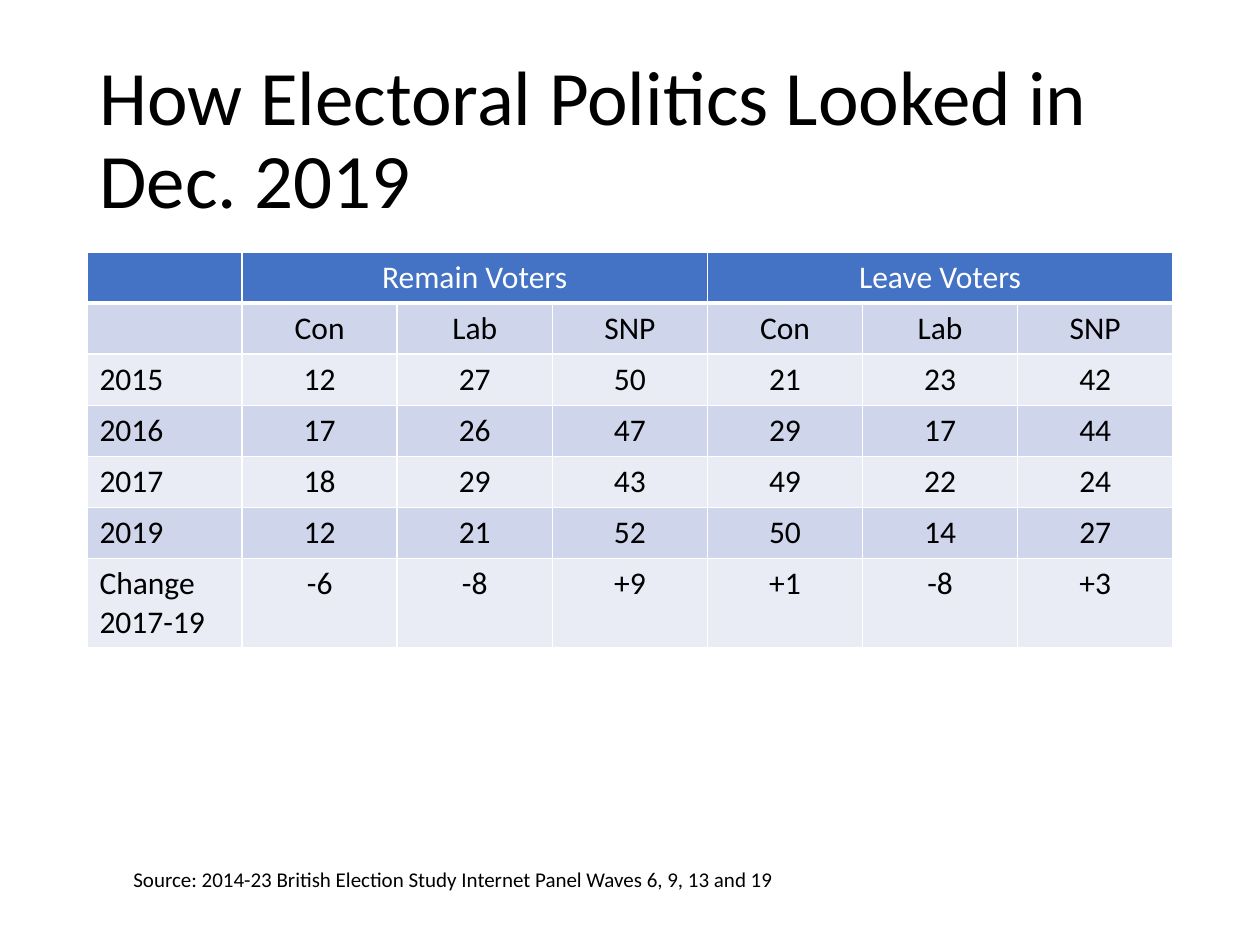
from dataclasses import dataclass

from lxml import etree
from pptx import Presentation
from pptx.dml.color import RGBColor
from pptx.enum.text import MSO_ANCHOR, MSO_AUTO_SIZE, PP_ALIGN
from pptx.oxml.ns import qn
from pptx.util import Inches, Pt

LEFT, MID = PP_ALIGN.LEFT, PP_ALIGN.CENTER
CENTRE = MSO_ANCHOR.MIDDLE
FIXED, GROW = MSO_AUTO_SIZE.NONE, MSO_AUTO_SIZE.SHAPE_TO_FIT_TEXT

FONT = "Calibri"
HUES = {
    "ink": "000000",
    "white": "FFFFFF",
    "head": "4472C4",
    "dark": "CFD5EA",
    "light": "E9EBF5",
}


@dataclass(frozen=True)
class Box:
    left: float
    top: float
    width: float
    height: float

    def lengths(self) -> tuple:
        return tuple(map(Inches, (self.left, self.top, self.width, self.height)))


@dataclass(frozen=True)
class Group:
    name: str
    start: int
    end: int


TITLE = Box(0.69, 0.4, 8.62, 1.45)
GRID = Box(0.69, 2, 8.62, 3.13)
NOTE = Box(0.96, 6.83, 6.91, 0.3)
LAST = 0.7

GROUPS = [Group("Remain Voters", 1, 3), Group("Leave Voters", 4, 6)]
ROWS = [
    ["", *["Con", "Lab", "SNP"] * 2],
    ["2015", "12", "27", "50", "21", "23", "42"],
    ["2016", "17", "26", "47", "29", "17", "44"],
    ["2017", "18", "29", "43", "49", "22", "24"],
    ["2019", "12", "21", "52", "50", "14", "27"],
    ["Change 2017-19", "-6", "-8", "+9", "+1", "-8", "+3"],
]


def write(frame, text: str, *, size=18, hue="ink", align=LEFT, line=None) -> None:
    para = frame.paragraphs[0]
    para.alignment = align
    if line:
        para.line_spacing = line
    run = para.add_run()
    run.text = text
    font = run.font
    font.name, font.size, font.bold = FONT, Pt(size), False
    font.color.rgb = RGBColor.from_string(HUES[hue])


def paint(cell, hue: str, base: int = 1) -> None:
    props = cell._tc.get_or_add_tcPr()
    for side, width in (("L", 1), ("R", 1), ("T", 1), ("B", base)):
        edge = etree.SubElement(props, qn(f"a:ln{side}"), w=str(Pt(width)))
        fill = etree.SubElement(edge, qn("a:solidFill"))
        etree.SubElement(fill, qn("a:srgbClr"), val=HUES["white"])
    cell.fill.solid()
    cell.fill.fore_color.rgb = RGBColor.from_string(HUES[hue])


def add_title(slide, text: str) -> None:
    title = slide.shapes.title
    title.left, title.top, title.width, title.height = TITLE.lengths()
    frame = title.text_frame
    frame.auto_size, frame.vertical_anchor = FIXED, CENTRE
    write(frame, text, size=44, line=0.9)


def add_grid(slide) -> None:
    rows, cols = len(ROWS) + 1, len(ROWS[0])
    table = slide.shapes.add_table(rows, cols, *GRID.lengths()).table
    for col in table.columns:
        col.width = Inches(GRID.width / cols)
    for row in table.rows:
        row.height = Inches((GRID.height - LAST) / (rows - 1))
    table.rows[rows - 1].height = Inches(LAST)

    for col in range(cols):
        paint(table.cell(0, col), "head", base=3)
    for group in GROUPS:
        cell = table.cell(0, group.start)
        cell.merge(table.cell(0, group.end))
        write(cell.text_frame, group.name, hue="white", align=MID)

    for r, texts in enumerate(ROWS, 1):
        for c, text in enumerate(texts):
            cell = table.cell(r, c)
            paint(cell, "dark" if r % 2 else "light")
            if text:
                write(cell.text_frame, text, align=MID if c else LEFT)


def add_note(slide, text: str) -> None:
    frame = slide.shapes.add_textbox(*NOTE.lengths()).text_frame
    frame.word_wrap, frame.auto_size = True, GROW
    write(frame, text, size=12)


def main() -> None:
    deck = Presentation()
    deck.slide_width, deck.slide_height = Inches(10), Inches(7.5)
    slide = deck.slides.add_slide(deck.slide_layouts.get_by_name("Title Only"))
    add_title(slide, "How Electoral Politics Looked in Dec. 2019")
    add_grid(slide)
    add_note(
        slide,
        "Source: 2014-23 British Election Study Internet Panel Waves 6, 9, 13 and 19",
    )
    deck.save("out.pptx")


if __name__ == "__main__":
    main()
